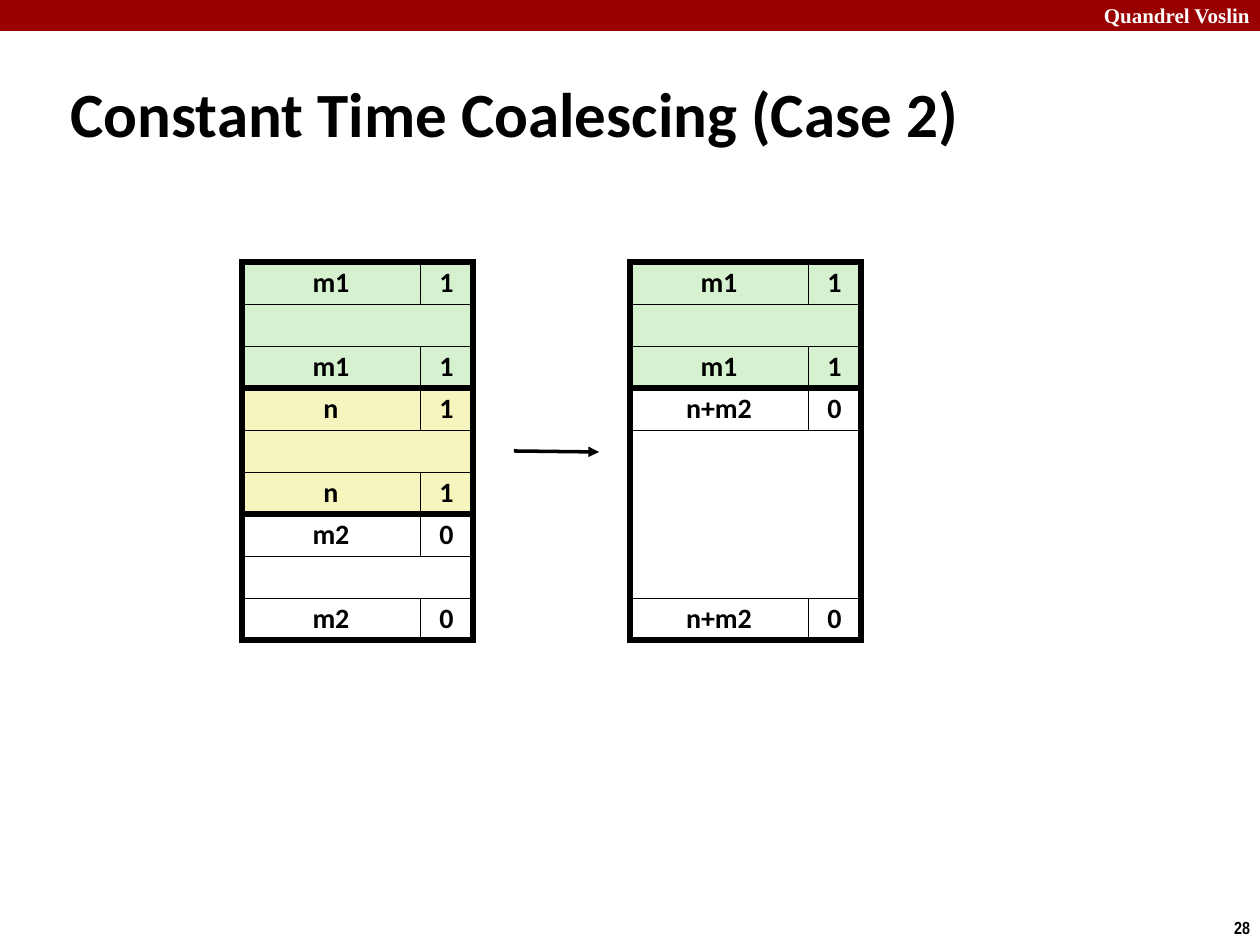
from pptx import Presentation
from pptx.dml.color import RGBColor
from pptx.enum.shapes import MSO_CONNECTOR, MSO_SHAPE
from pptx.enum.text import MSO_ANCHOR, PP_ALIGN
from pptx.oxml.ns import qn
from pptx.util import Pt
from lxml.etree import SubElement

COLORS = {
    "banner": "990000",
    "green": "D5F1CF",
    "yellow": "F6F5BD",
    "white": "FFFFFF",
    "black": "000000",
}
TITLE = "Constant Time Coalescing (Case 2)"
LABELS = [
    ("Quandrel Voslin", (1070, -4, 190, 38), "Times New Roman", 12, "white"),
    ("28", (1217, 911, 43, 34), "Arial Narrow", 10, "black"),
]
HEAPS = [
    (242, [("m1", "1", "green", 3), ("n", "1", "yellow", 3), ("m2", "0", "white", 3)]),
    (630, [("m1", "1", "green", 3), ("n+m2", "0", "white", 6)]),
]
ARROW = (514, 451, 599, 452)
HEAP_TOP, ROW_HEIGHT = 262, 42
SIZE_WIDTH, FLAG_WIDTH = 178, 53
BLOCK_WIDTH = SIZE_WIDTH + FLAG_WIDTH
LABEL_MARGIN = 10
SCALE = 914400 // 126


def px(*lengths):
    return [length * SCALE for length in lengths]


def color(name):
    return RGBColor.from_string(COLORS[name])


def write(frame, text, font, size, ink, alignment):
    frame.text = text
    para = frame.paragraphs[0]
    para.alignment = alignment
    span = para.runs[0].font
    span.name, span.size, span.bold = font, Pt(size), True
    span.color.rgb = color(ink)


def add_label(page, text, place, font, size, ink):
    frame = page.shapes.add_textbox(*px(*place)).text_frame
    frame.word_wrap = True
    frame.margin_left, frame.margin_right = px(LABEL_MARGIN, LABEL_MARGIN)
    write(frame, text, font, size, ink, PP_ALIGN.RIGHT)


def add_box(page, place, fill=None, line=None, text=""):
    box = page.shapes.add_shape(MSO_SHAPE.RECTANGLE, *px(*place))
    box.shadow.inherit = False
    if fill:
        box.fill.solid()
        box.fill.fore_color.rgb = color(fill)
    else:
        box.fill.background()
    if line:
        box.line.color.rgb = color("black")
        box.line.width = Pt(line)
        SubElement(box.line._get_or_add_ln(), qn("a:miter"), lim="800000")
    else:
        box.line.fill.background()
    if text:
        frame = box.text_frame
        frame.word_wrap = False
        frame.vertical_anchor = MSO_ANCHOR.MIDDLE
        write(frame, text, "Calibri", 16, "black", PP_ALIGN.CENTER)
        frame.paragraphs[0].line_spacing = 0.98


def add_block(page, left, top, size, flag, fill, rows):
    height = rows * ROW_HEIGHT
    for y in (top, top + height - ROW_HEIGHT):
        add_box(page, (left, y, SIZE_WIDTH, ROW_HEIGHT), fill, 0.25, size)
        add_box(page, (left + SIZE_WIDTH, y, FLAG_WIDTH, ROW_HEIGHT), fill, 0.25, flag)
    payload = (left, top + ROW_HEIGHT, BLOCK_WIDTH, height - 2 * ROW_HEIGHT)
    add_box(page, payload, fill, 0.25)
    add_box(page, (left, top, BLOCK_WIDTH, height), line=3)


def add_arrow(page, ends):
    arrow = page.shapes.add_connector(MSO_CONNECTOR.STRAIGHT, *px(*ends))
    arrow.line.color.rgb = color("black")
    arrow.line.width = Pt(2)
    SubElement(arrow.line._get_or_add_ln(), qn("a:tailEnd"), type="triangle")
    SubElement(arrow._element.spPr, qn("a:effectLst"))


def main():
    deck = Presentation()
    deck.slide_width, deck.slide_height = px(1260, 945)
    page = deck.slides.add_slide(deck.slide_layouts[5])

    add_box(page, (0, 0, 1260, 31), "banner")
    for label in LABELS:
        add_label(page, *label)

    title = page.shapes.title
    title.left, title.top, title.width, title.height = px(58, 73, 1144, 79)
    write(title.text_frame, TITLE, "Calibri", 36, "black", PP_ALIGN.LEFT)
    title.text_frame.vertical_anchor = MSO_ANCHOR.MIDDLE

    for left, blocks in HEAPS:
        top = HEAP_TOP
        for size, flag, fill, rows in blocks:
            add_block(page, left, top, size, flag, fill, rows)
            top += rows * ROW_HEIGHT
    add_arrow(page, ARROW)
    deck.save("out.pptx")


if __name__ == "__main__":
    main()
